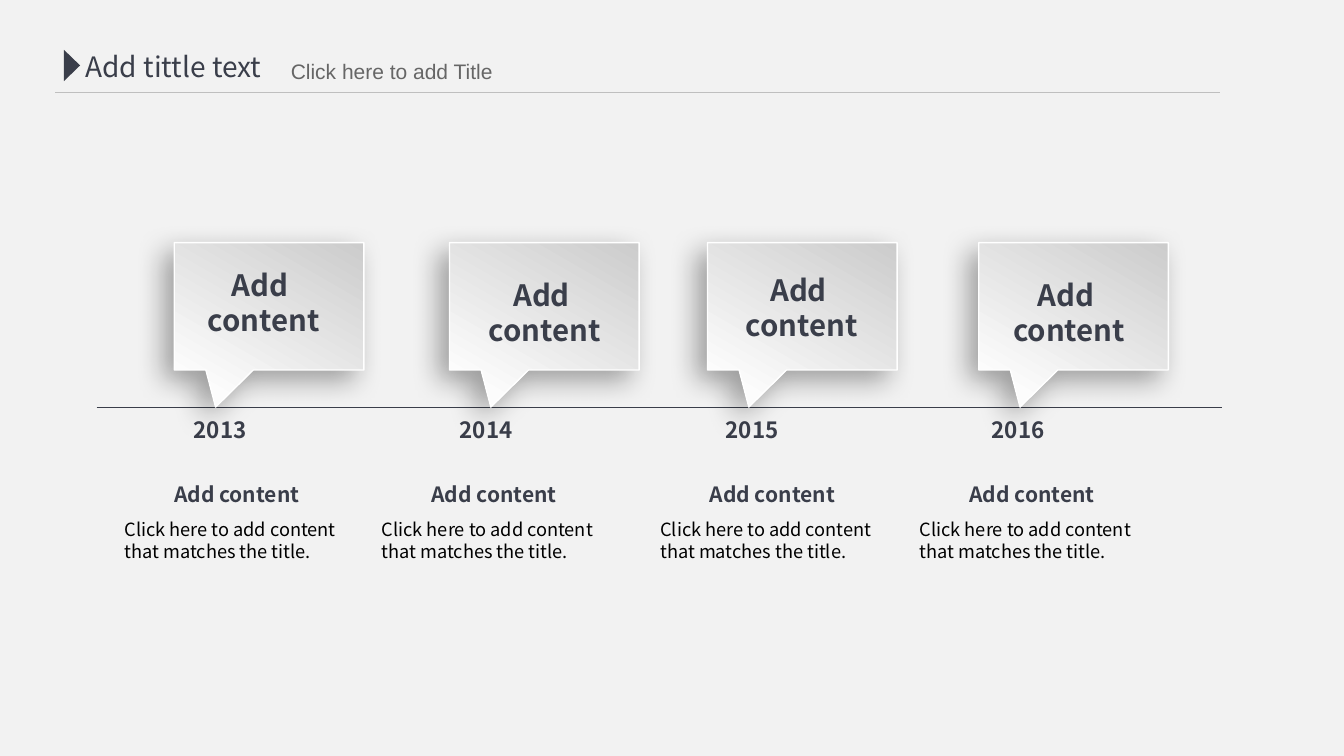
from lxml.etree import SubElement
from pptx import Presentation
from pptx.dml.color import RGBColor
from pptx.enum.shapes import MSO_CONNECTOR, MSO_SHAPE
from pptx.enum.text import MSO_AUTO_SIZE, PP_ALIGN
from pptx.oxml import parse_xml
from pptx.oxml.ns import nsdecls, qn
from pptx.util import Pt

COLORS = {
    "background": "F2F2F2", "slate": "3A3E4A", "rule": "BFBFBF", "subtitle": "666666",
    "body": "000000", "bubble_dark": "CCCCCC", "bubble_light": "FCFCFC", "edge": "FFFFFF",
}
COLORS = {part: RGBColor.from_string(value) for part, value in COLORS.items()}
SANS = "Noto Sans CJK SC"

prs = Presentation()
prs.slide_width, prs.slide_height = Pt(960), Pt(540)
slide = prs.slides.add_slide(prs.slide_layouts[6])
slide.background.fill.solid()
slide.background.fill.fore_color.rgb = COLORS["background"]


def add_text(text, left, top, width, height, size, color="slate", bold=False,
             font=SANS, align=PP_ALIGN.LEFT, wrap=False, insets=(7.2, 3.6)):
    """Add a text box; each line of text becomes a paragraph."""
    frame = slide.shapes.add_textbox(Pt(left), Pt(top), Pt(width), Pt(height)).text_frame
    frame.word_wrap = wrap
    frame.auto_size = MSO_AUTO_SIZE.SHAPE_TO_FIT_TEXT
    frame.margin_left = frame.margin_right = Pt(insets[0])
    frame.margin_top = frame.margin_bottom = Pt(insets[1])
    frame.text = text
    for paragraph in frame.paragraphs:
        paragraph.alignment = align
        for run in paragraph.runs:
            run.font.size, run.font.bold, run.font.name = Pt(size), bold, font
            run.font.color.rgb = COLORS[color]
            SubElement(run.font._element, qn("a:ea")).set("typeface", font)


def add_rule(left, right, y, color, weight):
    rule = slide.shapes.add_connector(MSO_CONNECTOR.STRAIGHT, Pt(left), Pt(y), Pt(right), Pt(y))
    rule.line.color.rgb = COLORS[color]
    rule.line.width = Pt(weight)
    SubElement(rule._element.spPr, qn("a:effectLst"))


# Header
add_rule(39.6, 871.2, 66.2, "rule", 0.75)
add_text("Add tittle text", 54, 31.7, 154, 31.7, 20)
marker = slide.shapes.add_shape(MSO_SHAPE.ISOSCELES_TRIANGLE, Pt(40.3), Pt(41), Pt(22.3), Pt(11.5))
marker.rotation = 90
marker.shadow.inherit = False
marker.fill.solid()
marker.fill.fore_color.rgb = COLORS["slate"]
marker.line.fill.background()
add_text("Click here to add Title", 200.6, 38.2, 195.4, 25.2, 15, "subtitle", font="Arial")

# Timeline: year, bubble left, bubble label left and top, description left
add_rule(69.1, 872.6, 291.3, "slate", 1)
milestones = [
    ("2013", 124.5, 139.7, 187.2, 82),
    ("2014", 321.1, 340.6, 194.4, 265.7),
    ("2015", 505.4, 524.2, 190.8, 464.6),
    ("2016", 699.1, 715, 194.4, 650),
]
for index, (year, bubble_left, label_left, label_top, description_left) in enumerate(milestones):
    add_text(year, 129 + 190 * index, 292.3, 59, 28.8, 16, bold=True, insets=(9.4, 5))

    bubble = slide.shapes.add_shape(
        MSO_SHAPE.RECTANGULAR_CALLOUT, Pt(bubble_left), Pt(173.3), Pt(135.4), Pt(91))
    bubble.adjustments[0], bubble.adjustments[1] = -0.282, 0.791
    bubble.fill.gradient()
    bubble.fill.gradient_angle = 240
    for stop, shade, position in zip(bubble.fill.gradient_stops,
                                     ("bubble_dark", "bubble_light"), (0, 1)):
        stop.color.rgb = COLORS[shade]
        stop.position = position
    bubble.line.color.rgb = COLORS["edge"]
    bubble.line.width = Pt(1)
    bubble._element.spPr.append(parse_xml(
        f'<a:effectLst {nsdecls("a")}><a:outerShdw blurRad="{Pt(20)}" dist="{Pt(10)}" '
        'dir="8160000" algn="ctr" rotWithShape="0"><a:srgbClr val="000000">'
        '<a:alpha val="34000"/></a:srgbClr></a:outerShdw></a:effectLst>'))

    add_text("Add \ncontent", label_left, label_top, 97.2, 58.3, 21, bold=True,
             align=PP_ALIGN.CENTER)
    add_text("Click here to add content that matches the title.",
             description_left, 366.5, 176.4, 38.9, 13, "body", wrap=True)
    add_text("Add content", description_left + 35.3, 340.6, 109.4, 25.2, 15, bold=True)

prs.save("out.pptx")
